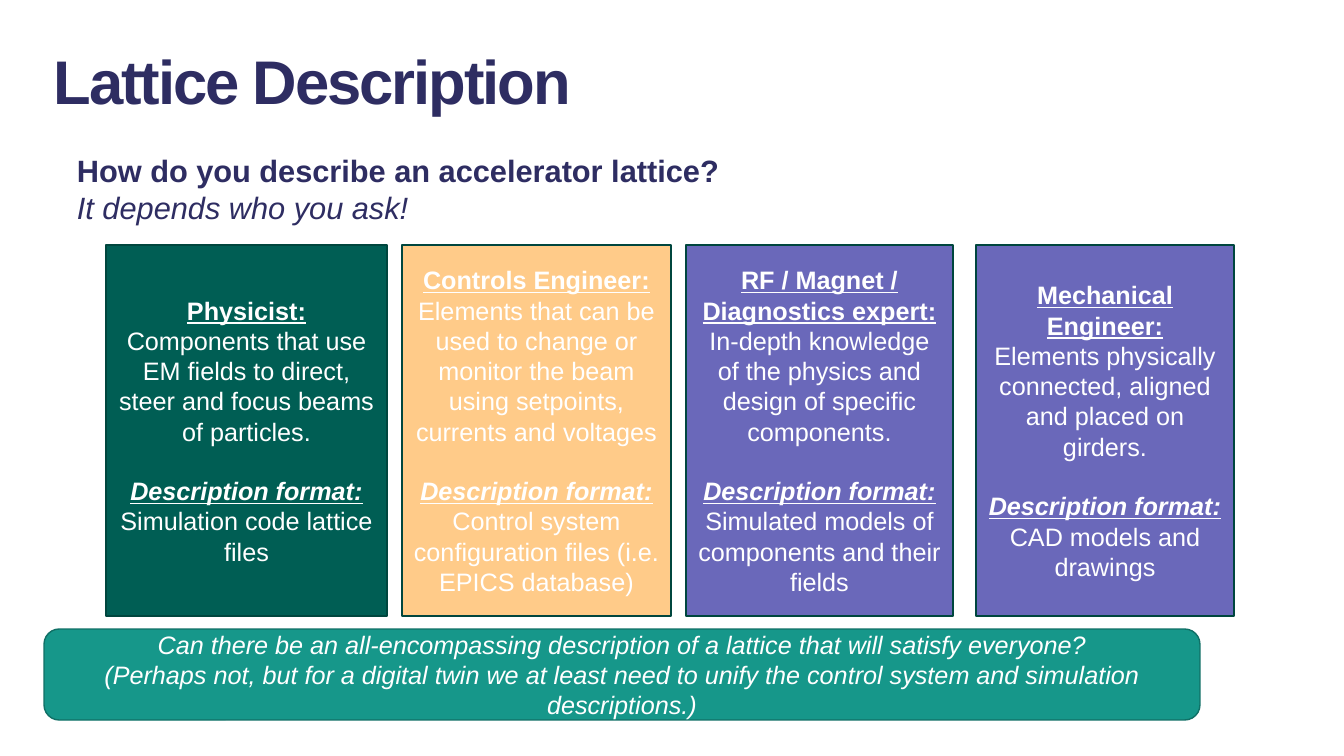
import pptx
import pptx.dml.color
import pptx.enum.shapes
import pptx.enum.text
import pptx.util

PX = 914400 / 100.8
NAVY, WHITE = "2E2D62", "FFFFFF"
MSO_SHAPE = pptx.enum.shapes.MSO_SHAPE
BODY_SIZE = 18
FORMAT_GAP = 21  # points, one line of body text

presentation = pptx.Presentation()
presentation.slide_width = round(1344 * PX)
presentation.slide_height = round(756 * PX)
slide = presentation.slides.add_slide(presentation.slide_layouts[6])


def add_box(bounds, preset=None, fill=None, line=None):
    """Add a filled shape, or a plain text box when no preset is given."""
    left, top, width, height = (round(value * PX) for value in bounds)
    if preset is None:
        shape = slide.shapes.add_textbox(left, top, width, height)
    else:
        shape = slide.shapes.add_shape(preset, left, top, width, height)
        shape.shadow.inherit = False
        shape.fill.solid()
        shape.fill.fore_color.rgb = pptx.dml.color.RGBColor.from_string(fill)
        shape.line.color.rgb = pptx.dml.color.RGBColor.from_string(line)
        shape.line.width = pptx.util.Pt(1)
        shape.text_frame.vertical_anchor = pptx.enum.text.MSO_ANCHOR.MIDDLE
    shape.text_frame.word_wrap = True
    return shape


def write(shape, lines, size, color, centered=False):
    """Write one paragraph per (text, style); style letters are b, i and u."""
    frame = shape.text_frame
    for index, (text, style) in enumerate(lines):
        paragraph = frame.add_paragraph() if index else frame.paragraphs[0]
        if centered:
            paragraph.alignment = pptx.enum.text.PP_ALIGN.CENTER
        run = paragraph.add_run()
        run.text = text
        run.font.name = "Arial"
        run.font.size = pptx.util.Pt(size)
        run.font.color.rgb = pptx.dml.color.RGBColor.from_string(color)
        run.font.bold = "b" in style
        run.font.italic = "i" in style
        run.font.underline = "u" in style


title = add_box((44, 38, 1288, 85))
write(title, [("Lattice Description", "b")], 44, NAVY)
title_run = title.text_frame.paragraphs[0].runs[0]
title_run.font._element.set("spc", "-150")

question = add_box((67, 147, 817, 85))
write(question, [
    ("How do you describe an accelerator lattice?", "b"),
    ("It depends who you ask!", "i"),
], 22, NAVY)

# left, width, fill, role, view of the lattice, description format
roles = [
    (106, 281, "005E54", "Physicist:",
     "Components that use EM fields to direct, steer and focus beams of particles.",
     "Simulation code lattice files"),
    (402, 269, "FFCB89", "Controls Engineer:",
     "Elements that can be used to change or monitor the beam using setpoints, "
     "currents and voltages",
     "Control system configuration files (i.e. EPICS database)"),
    (686, 267, "6A68BA", "RF / Magnet / Diagnostics expert:",
     "In-depth knowledge of the physics and design of specific components.",
     "Simulated models of components and their fields"),
    (976, 258, "6A68BA", "Mechanical Engineer:",
     "Elements physically connected, aligned and placed on girders.",
     "CAD models and drawings"),
]
for left, width, fill, role, view, description in roles:
    card = add_box((left, 245, width, 371), MSO_SHAPE.RECTANGLE, fill, "00463E")
    write(card, [
        (role, "bu"),
        (view, ""),
        ("Description format:", "biu"),
        (description, ""),
    ], BODY_SIZE, WHITE, centered=True)
    card.text_frame.paragraphs[2].space_before = pptx.util.Pt(FORMAT_GAP)

conclusion = add_box((44, 629, 1156, 91), MSO_SHAPE.ROUNDED_RECTANGLE, "16978A", "107066")
write(conclusion, [
    ("Can there be an all-encompassing description of a lattice that will satisfy everyone?", "i"),
    ("(Perhaps not, but for a digital twin we at least need to unify the control system "
     "and simulation descriptions.)", "i"),
], BODY_SIZE, WHITE, centered=True)

presentation.save("out.pptx")
